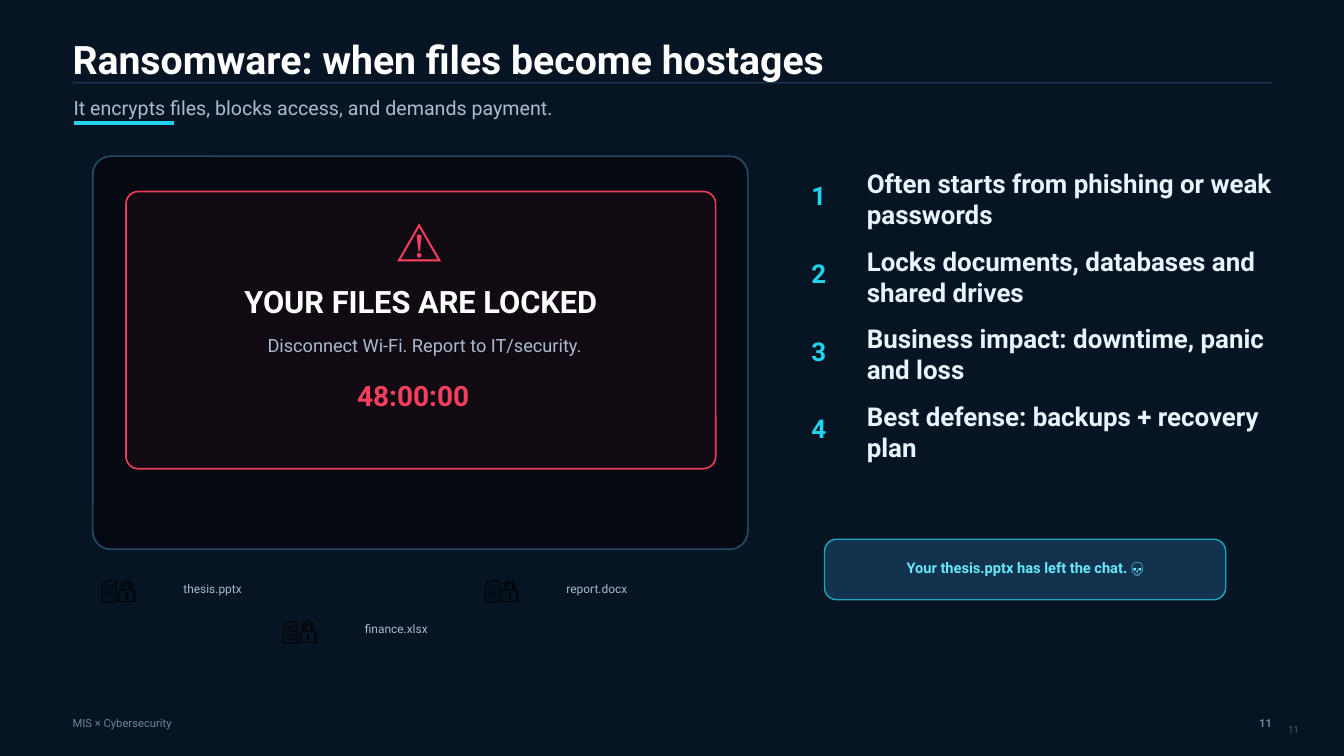
from lxml import etree
from pptx import Presentation
from pptx.dml.color import RGBColor
from pptx.enum.shapes import MSO_CONNECTOR, MSO_SHAPE
from pptx.enum.text import MSO_ANCHOR, PP_ALIGN
from pptx.oxml.ns import qn
from pptx.util import Pt

FONT = "Roboto"
NAVY = RGBColor(0x07, 0x14, 0x23)
EDGE = RGBColor(0x24, 0x49, 0x66)
SCREEN = RGBColor(0x05, 0x0A, 0x12)
ALERT_FILL = RGBColor(0x12, 0x0A, 0x12)
CALLOUT_FILL = RGBColor(0x12, 0x32, 0x4E)
RED = RGBColor(0xF4, 0x3F, 0x5E)
CYAN = RGBColor(0x22, 0xD3, 0xEE)
PALE_CYAN = RGBColor(0x67, 0xE8, 0xF9)
WHITE = RGBColor(0xFF, 0xFF, 0xFF)
ICE = RGBColor(0xEA, 0xF4, 0xFF)
MUTED = RGBColor(0xA9, 0xBC, 0xD0)
FOOTER = RGBColor(0x6B, 0x84, 0xA0)
DIM = RGBColor(0x45, 0x61, 0x7B)
BLACK = RGBColor(0x00, 0x00, 0x00)

LEFT, RIGHT = 51.84, 908.64
FOOTER_TOP = 509.76

LOCKED_FILES = [
    ("thesis.pptx", 72, 411.84),
    ("finance.xlsx", 201.6, 440.64),
    ("report.docx", 345.6, 411.84),
]
POINTS = [
    "Often starts from phishing or weak passwords",
    "Locks documents, databases and shared drives",
    "Business impact: downtime, panic and loss",
    "Best defense: backups + recovery plan",
]
POINTS_TOP, POINTS_STEP = 128.16, 55.44


def style_line(line, color, width, opacity=100):
    line.color.rgb = color
    line.width = Pt(width)
    if opacity < 100:
        clr = line.fill._xPr.find(".//" + qn("a:srgbClr"))
        etree.SubElement(clr, qn("a:alpha")).set("val", str(opacity * 1000))


def add_rule(s, x1, x2, y, color, width, opacity=100):
    sp = s.shapes.add_connector(MSO_CONNECTOR.STRAIGHT, Pt(x1), Pt(y), Pt(x2), Pt(y))
    style_line(sp.line, color, width, opacity)
    etree.SubElement(sp._element.spPr, qn("a:effectLst"))


def add_panel(s, x, y, w, h, radius, fill, edge, width, opacity=100):
    sp = s.shapes.add_shape(MSO_SHAPE.ROUNDED_RECTANGLE, Pt(x), Pt(y), Pt(w), Pt(h))
    sp.adjustments[0] = radius
    sp.shadow.inherit = False
    sp.fill.solid()
    sp.fill.fore_color.rgb = fill
    style_line(sp.line, edge, width, opacity)


def add_text(s, x, y, w, h, text, size, color, bold=False,
             align=PP_ALIGN.LEFT, anchor=MSO_ANCHOR.MIDDLE, inset=(0, 0)):
    tf = s.shapes.add_textbox(Pt(x), Pt(y), Pt(w), Pt(h)).text_frame
    tf.word_wrap = True
    tf.vertical_anchor = anchor
    tf.margin_left = tf.margin_right = Pt(inset[0])
    tf.margin_top = tf.margin_bottom = Pt(inset[1])
    p = tf.paragraphs[0]
    p.alignment = align
    r = p.add_run()
    r.text = text
    r.font.name = FONT
    r.font.size = Pt(size)
    r.font.bold = bold
    r.font.color.rgb = color


def add_locked_file(s, name, x, y):
    add_text(s, x, y, 50.4, 18, "📄🔒", 17, BLACK)
    add_text(s, x + 59.04, y + 4.32, 93.6, 8.64, name, 8.5, MUTED)


def add_point(s, number, text, y):
    add_text(s, 579.6, y + 1.44, 33.12, 20.16, str(number), 18.5, CYAN, True)
    add_text(s, 619.2, y, 295.2, 27.36, text, 18.5, ICE, True)


def main():
    prs = Presentation()
    prs.slide_width, prs.slide_height = Pt(960), Pt(540)
    s = prs.slides.add_slide(prs.slide_layouts[6])
    s.background.fill.solid()
    s.background.fill.fore_color.rgb = NAVY
    center = PP_ALIGN.CENTER

    # Heading
    add_rule(s, LEFT, RIGHT, 59.04, EDGE, 1, 70)
    add_text(s, LEFT, 25.2, 806.4, 33.12,
             "Ransomware: when files become hostages", 28, WHITE, True)
    add_text(s, 52.56, 66.96, 820.8, 20.16,
             "It encrypts files, blocks access, and demands payment.", 14, MUTED)
    add_rule(s, 52.56, 124.56, 87.84, CYAN, 3)

    # Locked screen
    add_panel(s, 66.24, 111.6, 468, 280.8, 0.046, SCREEN, EDGE, 1.2)
    add_panel(s, 90, 136.8, 421.2, 198, 0.044, ALERT_FILL, RED, 1.2, 95)
    add_text(s, 273.6, 152.64, 51.84, 37.44, "⚠", 32, RED, align=center)
    add_text(s, 147.6, 203.04, 306, 24.48,
             "YOUR FILES ARE LOCKED", 22, WHITE, True, center)
    add_text(s, 144, 239.04, 318.24, 14.4,
             "Disconnect Wi‑Fi. Report to IT/security.", 13, MUTED, align=center)
    add_text(s, 226.8, 272.16, 136.8, 20.16, "48:00:00", 20, RED, True, center)

    # Encrypted files
    for name, x, y in LOCKED_FILES:
        add_locked_file(s, name, x, y)

    # Numbered points
    for i, text in enumerate(POINTS):
        add_point(s, i + 1, text, POINTS_TOP + i * POINTS_STEP)

    # Callout
    add_panel(s, 588.96, 385.2, 286.56, 43.2, 0.2, CALLOUT_FILL, CYAN, 1, 75)
    add_text(s, 603.36, 400.32, 257.76, 10.8,
             "Your thesis.pptx has left the chat. 💀", 10.5, PALE_CYAN, True, center)

    # Footer
    add_text(s, LEFT, FOOTER_TOP, 172.8, 12.96, "MIS × Cybersecurity", 8, FOOTER)
    add_text(s, 879.84, FOOTER_TOP, 28.8, 12.96, "11", 8, FOOTER, True, PP_ALIGN.RIGHT)
    add_text(s, 912.96, 513.36, 62.64, 23.76, "11", 7, DIM,
             anchor=MSO_ANCHOR.TOP, inset=(7.2, 3.6))

    prs.save("out.pptx")


if __name__ == "__main__":
    main()
